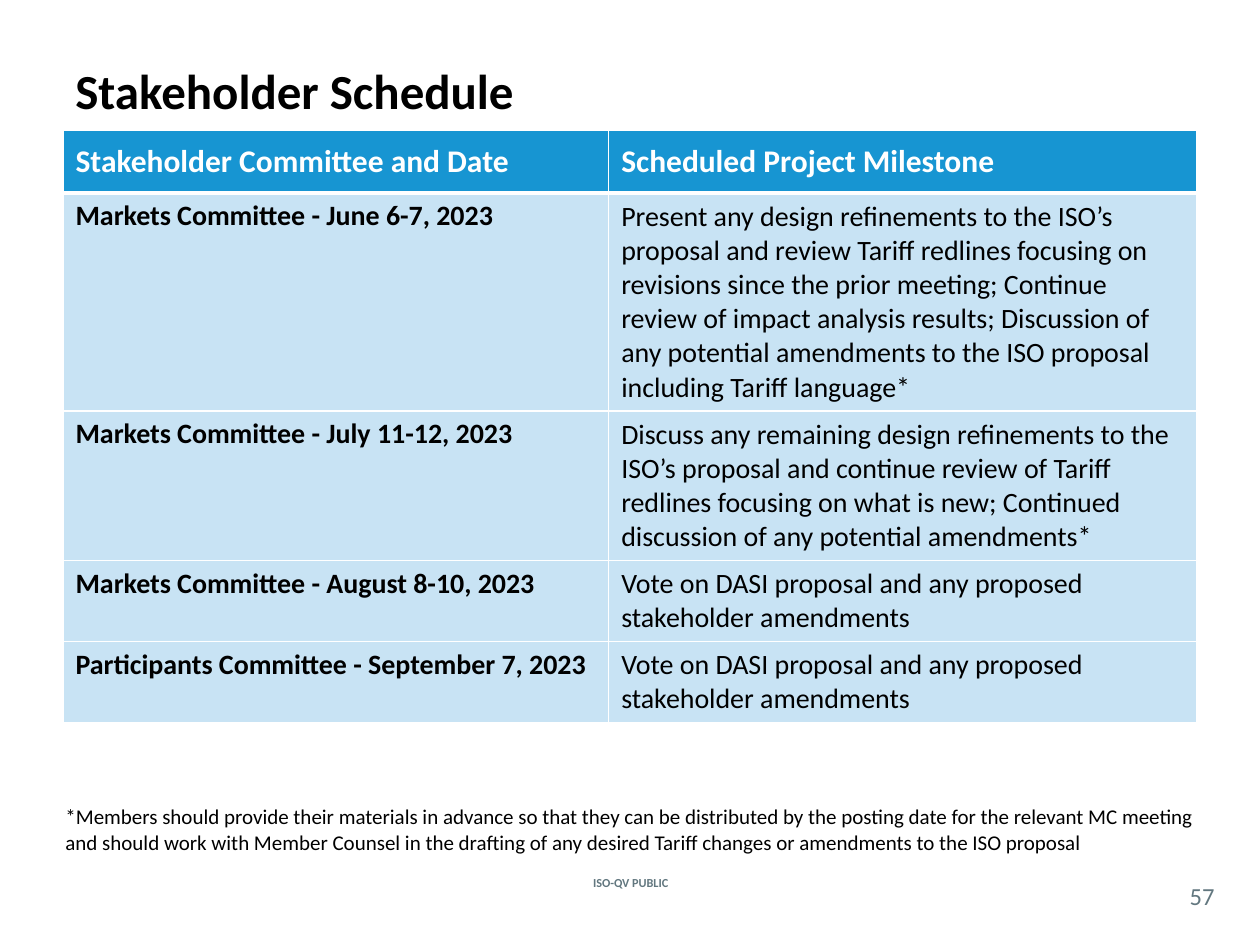
"""Build the stakeholder schedule slide."""

from dataclasses import dataclass

from lxml.etree import SubElement
from pptx import Presentation
from pptx.dml.color import RGBColor
from pptx.enum.text import MSO_ANCHOR, PP_ALIGN
from pptx.oxml.ns import qn
from pptx.slide import Slide
from pptx.table import _Cell
from pptx.text.text import TextFrame
from pptx.util import Cm, Pt


@dataclass(frozen=True)
class Theme:
    font: str = "Calibri"
    black: str = "000000"
    white: str = "FFFFFF"
    grey: str = "62777F"
    header_fill: str = "1795D2"
    body_fill: str = "C8E3F4"
    title_size: int = 28
    header_size: int = 18
    body_size: int = 16
    number_size: int = 14
    note_size: int = 12
    label_size: int = 7


@dataclass(frozen=True)
class Style:
    size: int
    color: str
    bold: bool = False
    align: PP_ALIGN = PP_ALIGN.LEFT


@dataclass(frozen=True)
class Label:
    text: str
    left: float
    top: float
    width: float
    height: float
    style: Style
    anchor: MSO_ANCHOR = MSO_ANCHOR.MIDDLE
    padded: bool = True


@dataclass(frozen=True)
class Meeting:
    date: str
    milestone: str


THEME = Theme()
HEADER = Style(THEME.header_size, THEME.white, bold=True)
DATE = Style(THEME.body_size, THEME.black, bold=True)
MILESTONE = Style(THEME.body_size, THEME.black)

VOTE = "Vote on DASI proposal and any proposed stakeholder amendments"
HEADING = Meeting("Stakeholder Committee and Date", "Scheduled Project Milestone")
MEETINGS = (
    Meeting(
        "Markets Committee - June 6-7, 2023",
        "Present any design refinements to the ISO’s proposal and review Tariff "
        "redlines focusing on revisions since the prior meeting; Continue review of "
        "impact analysis results; Discussion of any potential amendments to the ISO "
        "proposal including Tariff language*",
    ),
    Meeting(
        "Markets Committee - July 11-12, 2023",
        "Discuss any remaining design refinements to the ISO’s proposal and continue "
        "review of Tariff redlines focusing on what is new; Continued discussion of "
        "any potential amendments*",
    ),
    Meeting("Markets Committee - August 8-10, 2023", VOTE),
    Meeting("Participants Committee - September 7, 2023", VOTE),
)

LABELS = (
    Label("ISO-QV PUBLIC", 10.85, 17.58, 3.73, 0.43,
          Style(THEME.label_size, THEME.grey, True, PP_ALIGN.CENTER)),
    Label("Stakeholder Schedule", 1.27, 1.07, 22.86, 1.47,
          Style(THEME.title_size, THEME.black, True)),
    Label("57", 23.7, 17.68, 1.07, 0.74,
          Style(THEME.number_size, THEME.grey, align=PP_ALIGN.CENTER), padded=False),
    Label(
        "*Members should provide their materials in advance so that they can be "
        "distributed by the posting date for the relevant MC meeting and should work "
        "with Member Counsel in the drafting of any desired Tariff changes or "
        "amendments to the ISO proposal",
        1.07, 16.08, 23.5, 1.27, Style(THEME.note_size, THEME.black), MSO_ANCHOR.TOP),
)


def write_text(frame: TextFrame, text: str, style: Style) -> None:
    """Write one styled paragraph into a text frame."""
    paragraph = frame.paragraphs[0]
    paragraph.alignment = style.align
    span = paragraph.add_run()
    span.text = text
    span.font.name = THEME.font
    span.font.size = Pt(style.size)
    span.font.bold = style.bold
    span.font.color.rgb = RGBColor.from_string(style.color)


def add_label(page: Slide, label: Label) -> None:
    """Add a wrapped text box."""
    box = page.shapes.add_textbox(
        Cm(label.left), Cm(label.top), Cm(label.width), Cm(label.height))
    frame = box.text_frame
    frame.word_wrap = True
    frame.vertical_anchor = label.anchor
    if not label.padded:
        frame.margin_left = frame.margin_right = Cm(0)
        frame.margin_top = frame.margin_bottom = Cm(0)
    write_text(frame, label.text, label.style)


def set_borders(cell: _Cell, top: int, bottom: int) -> None:
    """Draw white borders, with widths in points above and below."""
    properties = cell._tc.get_or_add_tcPr()
    widths = {"a:lnL": 1, "a:lnR": 1, "a:lnT": top, "a:lnB": bottom}
    for position, (tag, width) in enumerate(widths.items()):
        line = SubElement(properties, qn(tag), w=str(Pt(width)))
        fill = SubElement(line, qn("a:solidFill"))
        SubElement(fill, qn("a:srgbClr"), val=THEME.white)
        properties.insert(position, line)


def fill_cell(cell: _Cell, text: str, style: Style, fill: str, anchor: MSO_ANCHOR) -> None:
    """Fill a table cell with colour and text."""
    cell.fill.solid()
    cell.fill.fore_color.rgb = RGBColor.from_string(fill)
    cell.vertical_anchor = anchor
    write_text(cell.text_frame, text, style)


def add_schedule(page: Slide) -> None:
    """Add the table of committee meetings and milestones."""
    rows = (HEADING, *MEETINGS)
    table = page.shapes.add_table(
        len(rows), 2, Cm(1.27), Cm(2.62), Cm(22.86), Cm(11.76)).table
    table.columns[0].width = Cm(11)
    table.columns[1].width = Cm(11.86)
    for index, meeting in enumerate(rows):
        is_header = index == 0
        table.rows[index].height = Cm(1.27 if is_header else 1.07)
        fill = THEME.header_fill if is_header else THEME.body_fill
        date_anchor = MSO_ANCHOR.MIDDLE if is_header else MSO_ANCHOR.TOP
        date_cell, milestone_cell = table.cell(index, 0), table.cell(index, 1)
        fill_cell(date_cell, meeting.date, HEADER if is_header else DATE, fill, date_anchor)
        fill_cell(milestone_cell, meeting.milestone,
                  HEADER if is_header else MILESTONE, fill, MSO_ANCHOR.MIDDLE)
        for cell in (date_cell, milestone_cell):
            set_borders(cell, 3 if index == 1 else 1, 3 if is_header else 1)


def main() -> None:
    """Create and save the deck."""
    deck = Presentation()
    deck.slide_width, deck.slide_height = Cm(25.4), Cm(19.05)
    page = deck.slides.add_slide(deck.slide_layouts[6])
    add_schedule(page)
    for label in LABELS:
        add_label(page, label)
    deck.save("out.pptx")


if __name__ == "__main__":
    main()
